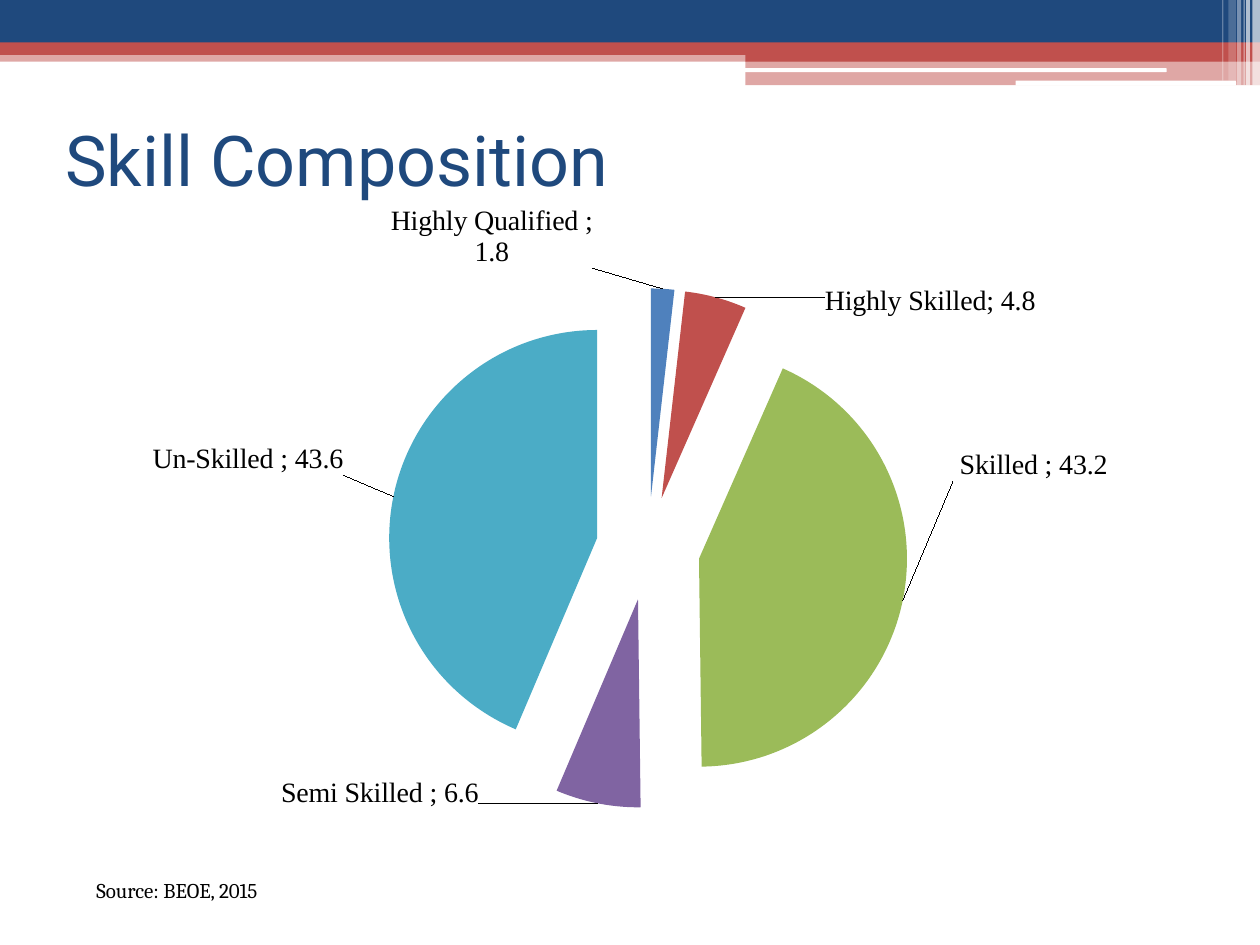
"""Build the Skill Composition slide with an exploded pie chart."""
import lxml.etree
import pptx
import pptx.chart.data
import pptx.dml.color
import pptx.enum.chart
import pptx.enum.shapes
import pptx.enum.text
import pptx.oxml
import pptx.oxml.ns
import pptx.util

Pt = pptx.util.Pt
RGBColor = pptx.dml.color.RGBColor
SHAPE = pptx.enum.shapes.MSO_SHAPE
qn = pptx.oxml.ns.qn

NAVY = RGBColor(0x1F, 0x49, 0x7D)
RED = RGBColor(0xC0, 0x50, 0x4D)
BLUE = RGBColor(0x4F, 0x81, 0xBD)
GREEN = RGBColor(0x9B, 0xBB, 0x59)
PURPLE = RGBColor(0x80, 0x64, 0xA2)
TEAL = RGBColor(0x4B, 0xAC, 0xC6)
WHITE = RGBColor(0xFF, 0xFF, 0xFF)
BLACK = RGBColor(0, 0, 0)

TITLE = "Skill Composition"
SOURCE = "Source: BEOE, 2015"

# name, value, colour, label offset as a share of the chart
SKILLS = [
    ("Highly Qualified ", 1.8, BLUE, (-0.16, -0.02)),
    ("Highly Skilled", 4.8, RED, (0.1, 0.04)),
    (" Skilled ", 43.2, GREEN, (0.04, -0.23)),
    ("Semi Skilled ", 6.6, PURPLE, (-0.11, -0.05)),
    ("Un-Skilled ", 43.6, TEAL, (-0.04, -0.03)),
]
PLOT_AREA = {"x": 0.274, "y": 0.135, "w": 0.486, "h": 0.786}
EXPLOSION = 25

BANDS = [
    (0, 28.8, 720, 6.5, RED, 50),
    (0, 0, 720, 24.5, NAVY, 100),
    (0, 24.2, 720, 7.2, RED, 100),
    (426, 28.1, 294, 7.2, RED, 100),
    (426, 35, 294, 13.7, RED, 50),
]
RULES = [
    (425.5, 39, 241.2, 2.2, WHITE, 100),
    (580.3, 46.1, 126, 2.9, WHITE, 100),
]
STRIPES = [
    (715.7, 4.3, 49, 65),
    (712.1, 2.2, 49, 65),
    (710.6, 0.7, 49, 60),
    (707, 2.2, 49, 40),
    (702, 4.3, 46.1, 20),
    (698.4, 0.7, 46.1, 30),
]


def add_block(s, kind, left, top, width, height, color, alpha):
    sp = s.shapes.add_shape(kind, Pt(left), Pt(top), Pt(width), Pt(height))
    sp.shadow.inherit = False
    sp.fill.solid()
    sp.fill.fore_color.rgb = color
    sp.line.fill.background()
    if alpha < 100:
        clr = sp.element.spPr.find(".//" + qn("a:srgbClr"))
        lxml.etree.SubElement(clr, qn("a:alpha")).set("val", str(alpha * 1000))


def set_text(sp, text, font, size, color):
    tf = sp.text_frame
    tf.word_wrap = True
    tf.text = text
    p = tf.paragraphs[0]
    p.alignment = pptx.enum.text.PP_ALIGN.LEFT
    r = p.runs[0]
    r.font.name, r.font.size, r.font.color.rgb = font, Pt(size), color


def chart_xml(tag, body):
    return pptx.oxml.parse_xml(f"<c:{tag} {pptx.oxml.ns.nsdecls('c')}>{body}</c:{tag}>")


def explosion():
    e = chart_xml("explosion", "")
    e.set("val", str(EXPLOSION))
    return e


def point_label(idx, dx, dy):
    shown = {"LegendKey": 0, "Val": 1, "CatName": 1, "SerName": 0,
             "Percent": 0, "BubbleSize": 0}
    flags = "".join(f'<c:show{k} val="{v}"/>' for k, v in shown.items())
    return chart_xml(
        "dLbl",
        f'<c:idx val="{idx}"/><c:layout><c:manualLayout><c:x val="{dx}"/>'
        f'<c:y val="{dy}"/></c:manualLayout></c:layout>'
        '<c:numFmt formatCode="0.0" sourceLinked="0"/>'
        f'<c:dLblPos val="outEnd"/>{flags}<c:separator>; </c:separator>')


def set_plot_layout(chart):
    area = chart.element.find(".//" + qn("c:plotArea"))
    old = area.find(qn("c:layout"))
    if old is not None:
        area.remove(old)
    modes = '<c:layoutTarget val="inner"/><c:xMode val="edge"/><c:yMode val="edge"/>'
    sizes = "".join(f'<c:{k} val="{v}"/>' for k, v in PLOT_AREA.items())
    area.insert(0, chart_xml("layout", f"<c:manualLayout>{modes}{sizes}</c:manualLayout>"))


def add_pie(s):
    data = pptx.chart.data.CategoryChartData(number_format="0.0")
    data.categories = [skill[0] for skill in SKILLS]
    data.add_series("Series 1", [skill[1] for skill in SKILLS])
    chart = s.shapes.add_chart(pptx.enum.chart.XL_CHART_TYPE.PIE,
                               Pt(54), Pt(113.8), Pt(612), Pt(378), data).chart
    chart.has_title = False
    chart.has_legend = False
    chart.font.name, chart.font.size = "Times New Roman", Pt(16)
    chart.font.color.rgb = BLACK
    set_plot_layout(chart)

    plot = chart.plots[0]
    plot.vary_by_categories = True
    series = plot.series[0]
    labels = series.data_labels
    labels.show_value = labels.show_category_name = True
    labels.number_format, labels.number_format_is_linked = "0.0", False
    labels.position = pptx.enum.chart.XL_LABEL_POSITION.OUTSIDE_END
    ser = chart.element.find(".//" + qn("c:ser"))
    for i, (_, _, color, offset) in enumerate(SKILLS):
        fill = series.points[i].format.fill
        fill.solid()
        fill.fore_color.rgb = color
        ser.find(qn("c:dLbls")).insert(i, point_label(i, *offset))
    for point in ser.findall(qn("c:dPt")):
        point.find(qn("c:spPr")).addprevious(explosion())
    ser.find(qn("c:tx")).addnext(explosion())


def main():
    prs = pptx.Presentation()
    prs.slide_width, prs.slide_height = Pt(720), Pt(540)
    s = prs.slides.add_slide(prs.slide_layouts[5])

    for band in BANDS:
        add_block(s, SHAPE.RECTANGLE, *band)
    for rule in RULES:
        add_block(s, SHAPE.ROUNDED_RECTANGLE, *rule)
    for left, width, height, alpha in STRIPES:
        add_block(s, SHAPE.RECTANGLE, left, 0, width, height, WHITE, alpha)

    title = s.shapes.title
    title.left, title.top, title.width, title.height = Pt(30), Pt(48.5), Pt(648), Pt(84)
    set_text(title, TITLE, "Roboto", 40, NAVY)
    title.text_frame.vertical_anchor = pptx.enum.text.MSO_ANCHOR.MIDDLE

    add_pie(s)
    box = s.shapes.add_textbox(Pt(48), Pt(498), Pt(204), Pt(21.8))
    set_text(box, SOURCE, "Cambria", 12, BLACK)
    prs.save("out.pptx")


if __name__ == "__main__":
    main()
